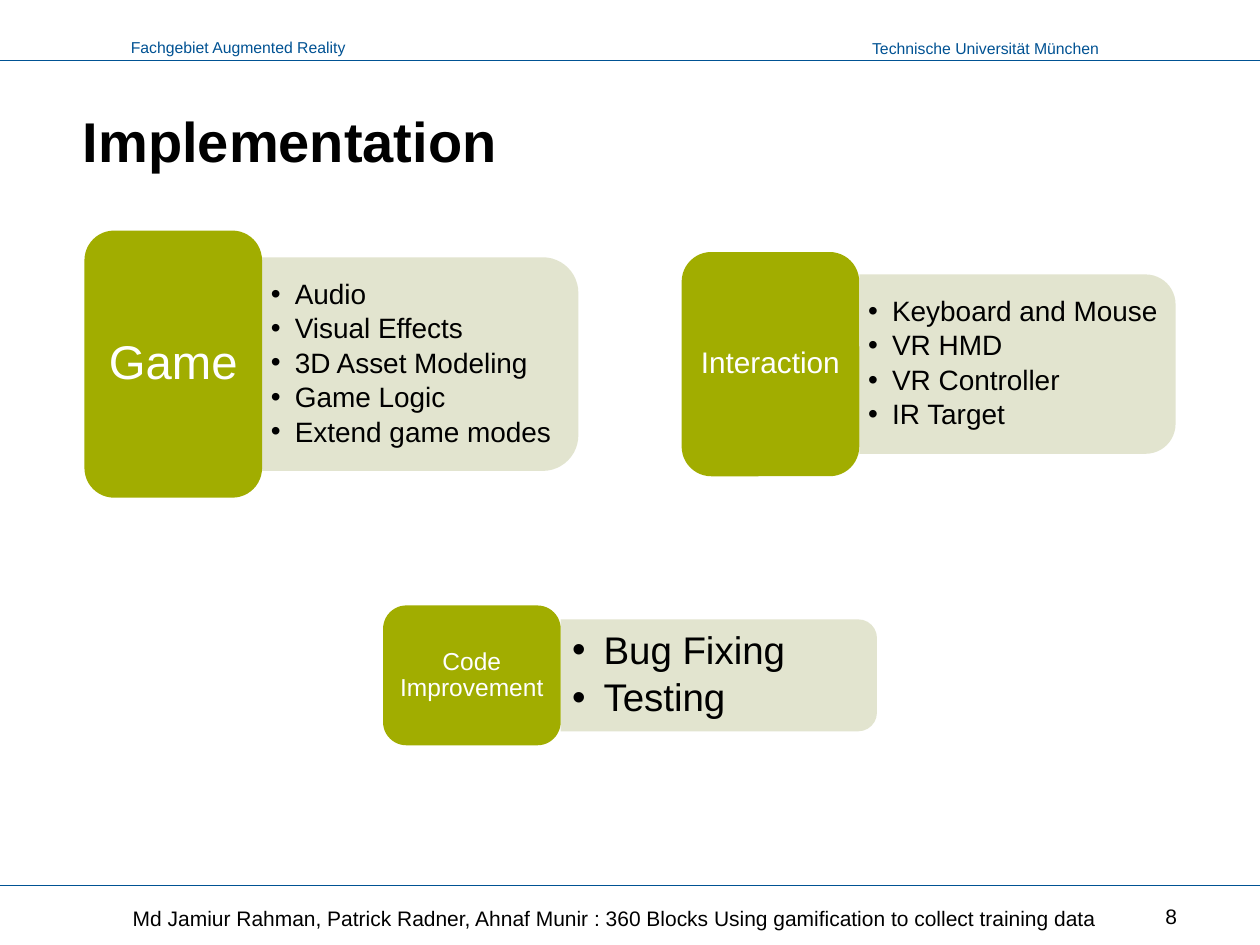
from dataclasses import dataclass

from lxml.etree import SubElement
from pptx import Presentation
from pptx.dml.color import RGBColor
from pptx.enum.shapes import MSO_CONNECTOR, MSO_SHAPE
from pptx.enum.text import MSO_ANCHOR as Anchor, PP_ALIGN as Align
from pptx.oxml.ns import qn
from pptx.util import Inches, Pt


@dataclass(frozen=True)
class Theme:
    font: str = "Arial"
    rule: str = "005293"
    text: str = "000000"
    label: str = "A1AD00"
    label_text: str = "FFFFFF"
    panel: str = "DFE2CA"
    panel_opacity: int = 90
    header_size: int = 9
    title_size: int = 32
    footer_size: int = 12


@dataclass(frozen=True)
class Topic:
    name: str
    name_size: int
    left: float
    middle: float
    height: float
    items: tuple[str, ...]
    item_size: int
    indent: float
    inset: float
    gap: float


@dataclass(frozen=True)
class Caption:
    text: str
    box: tuple[float, float, float, float]
    size: int
    color: str
    align: Align
    anchor: Anchor
    bold: bool = False
    wrap: bool = True


THEME = Theme()
LABEL_W, PANEL_W = 1.41, 2.51
PANEL_RATIO = 0.8
CORNER = 0.167

TOPICS = (
    Topic("Game", 27, 0.67, 2.89, 2.12,
          ("Audio", "Visual Effects", "3D Asset Modeling", "Game Logic",
           "Extend game modes"), 16, 0.19, 0.07, 2.4),
    Topic("Interaction", 17, 5.41, 2.89, 1.78,
          ("Keyboard and Mouse", "VR HMD", "VR Controller", "IR Target"),
          16, 0.19, 0.07, 2.4),
    Topic("Code Improvement", 14, 3.04, 5.36, 1.11,
          ("Bug Fixing", "Testing"), 22, 0.25, 0.09, 3.3),
)

CAPTIONS = (
    Caption("Technische Universität München", (6.81, 0.26, 2.01, 0.25),
            THEME.header_size, THEME.rule, Align.RIGHT, Anchor.TOP, wrap=False),
    Caption("Fachgebiet Augmented Reality", (0.91, 0.25, 1.93, 0.25),
            THEME.header_size, THEME.rule, Align.RIGHT, Anchor.TOP, wrap=False),
    Caption("Implementation", (0.56, 0.76, 8.89, 0.67),
            THEME.title_size, THEME.text, Align.LEFT, Anchor.BOTTOM, bold=True),
    Caption("8", (7.36, 7.11, 2.08, 0.33),
            THEME.footer_size, THEME.text, Align.RIGHT, Anchor.MIDDLE),
    Caption("Md Jamiur Rahman, Patrick Radner, Ahnaf Munir : 360 Blocks "
            "Using gamification to collect training data",
            (0.56, 7.12, 8.64, 0.33),
            THEME.footer_size, THEME.text, Align.CENTER, Anchor.MIDDLE),
)


def set_frame(tf, anchor: Anchor, inset_x: float, inset_y: float,
              wrap: bool = True) -> None:
    values = {"word_wrap": wrap, "vertical_anchor": anchor,
              "margin_left": Inches(inset_x), "margin_right": Inches(inset_x),
              "margin_top": Inches(inset_y), "margin_bottom": Inches(inset_y)}
    for name, value in values.items():
        setattr(tf, name, value)


def write(p, text: str, size: int, color: str, bold: bool = False) -> None:
    r = p.add_run()
    r.text = text
    for name, value in {"name": THEME.font, "size": Pt(size), "bold": bold}.items():
        setattr(r.font, name, value)
    r.font.color.rgb = RGBColor.from_string(color)


def add_bullet(p, indent: float) -> None:
    pPr = p._p.get_or_add_pPr()
    pPr.set("marL", str(Inches(indent)))
    pPr.set("indent", str(-Inches(indent)))
    color = SubElement(pPr, qn("a:buClr"))
    SubElement(color, qn("a:srgbClr"), val=THEME.text)
    SubElement(pPr, qn("a:buFont"), typeface=THEME.font)
    SubElement(pPr, qn("a:buChar"), char="•")


def add_caption(slide, caption: Caption) -> None:
    tf = slide.shapes.add_textbox(*map(Inches, caption.box)).text_frame
    set_frame(tf, caption.anchor, 0.1, 0.05, caption.wrap)
    p = tf.paragraphs[0]
    p.alignment = caption.align
    write(p, caption.text, caption.size, caption.color, caption.bold)


def add_rule(slide, y: float) -> None:
    line = slide.shapes.add_connector(
        MSO_CONNECTOR.STRAIGHT, Inches(0), Inches(y), Inches(10), Inches(y))
    line.line.color.rgb = RGBColor.from_string(THEME.rule)
    line.line.width = Pt(0.75)
    SubElement(line._element.spPr, qn("a:effectLst"))


def add_block(slide, kind: MSO_SHAPE, center: tuple[float, float],
              width: float, height: float, color: str):
    x, y = center
    sp = slide.shapes.add_shape(kind, Inches(x - width / 2), Inches(y - height / 2),
                                Inches(width), Inches(height))
    sp.adjustments[0] = CORNER
    sp.shadow.inherit = False
    sp.fill.solid()
    sp.fill.fore_color.rgb = RGBColor.from_string(color)
    sp.line.fill.background()
    return sp


def add_topic(slide, topic: Topic) -> None:
    panel_left = topic.left + LABEL_W
    panel_h = topic.height * PANEL_RATIO

    # Panel: turned so that its round corners face right
    panel = add_block(slide, MSO_SHAPE.ROUND_2_SAME_RECTANGLE,
                      (panel_left + PANEL_W / 2, topic.middle),
                      panel_h, PANEL_W, THEME.panel)
    panel.rotation = 90
    color = panel._element.spPr.find(qn("a:solidFill"))[0]
    SubElement(color, qn("a:alpha"), val=str(THEME.panel_opacity * 1000))

    # Bulleted items
    tf = slide.shapes.add_textbox(
        Inches(panel_left), Inches(topic.middle - panel_h / 2),
        Inches(PANEL_W), Inches(panel_h)).text_frame
    set_frame(tf, Anchor.MIDDLE, topic.inset, 0.03)
    for i, item in enumerate(topic.items):
        p = tf.add_paragraph() if i else tf.paragraphs[0]
        add_bullet(p, topic.indent)
        p.line_spacing = 0.9
        if i:
            p.space_before = Pt(topic.gap)
        write(p, item, topic.item_size, THEME.text)

    # Label
    label = add_block(slide, MSO_SHAPE.ROUNDED_RECTANGLE,
                      (topic.left + LABEL_W / 2, topic.middle),
                      LABEL_W, topic.height, THEME.label)
    set_frame(label.text_frame, Anchor.MIDDLE, 0.04, 0.03)
    p = label.text_frame.paragraphs[0]
    p.alignment = Align.CENTER
    p.line_spacing = 0.9
    write(p, topic.name, topic.name_size, THEME.label_text)


def main() -> None:
    prs = Presentation()
    prs.slide_width, prs.slide_height = Inches(10), Inches(7.5)
    s = prs.slides.add_slide(prs.slide_layouts[6])

    # Header and footer rules
    for y in (0.48, 7.03):
        add_rule(s, y)
    # Header, title and footer texts
    for caption in CAPTIONS:
        add_caption(s, caption)
    # Topics
    for topic in TOPICS:
        add_topic(s, topic)

    prs.save("out.pptx")


if __name__ == "__main__":
    main()
